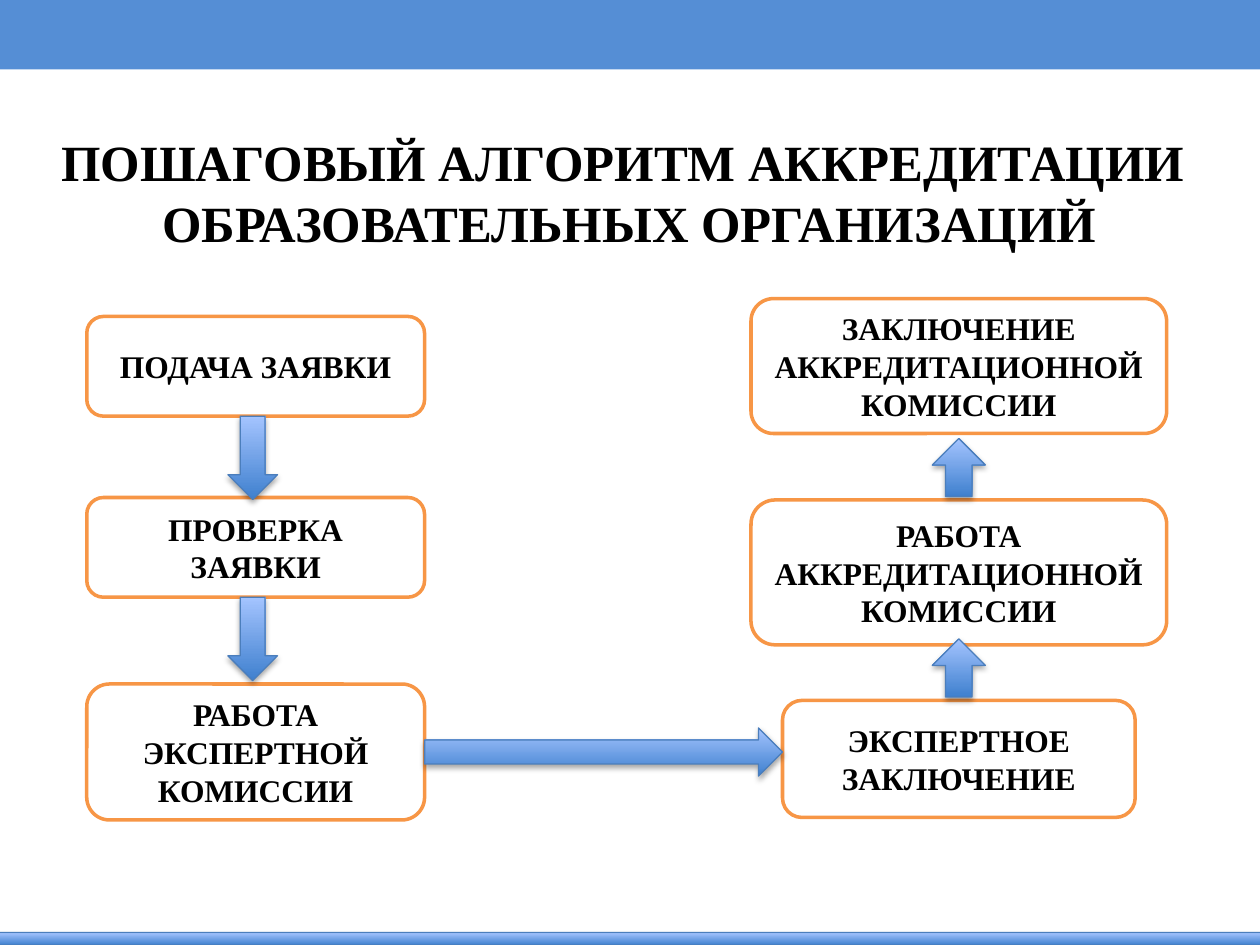
from dataclasses import dataclass
from itertools import pairwise

from lxml import etree
from pptx import Presentation
from pptx.dml.color import RGBColor
from pptx.enum.shapes import MSO_SHAPE as Shape
from pptx.enum.text import MSO_ANCHOR as Anchor, PP_ALIGN as Align
from pptx.oxml import parse_xml
from pptx.oxml.ns import nsdecls
from pptx.util import Cm, Pt


@dataclass(frozen=True)
class Theme:
    font: str = "Times New Roman"
    title_size: float = 29
    step_size: float = 18
    text: str = "000000"
    banner: str = "558ED5"
    box_fill: str = "FFFFFF"
    box_line: str = "F79646"
    grad_dark: str = "3F80CE"
    grad_light: str = "A4C4FF"
    grad_line: str = "4B7EBC"


@dataclass(frozen=True)
class Box:
    """A rectangle in centimetres."""
    x: float
    y: float
    w: float
    h: float

    @property
    def cx(self):
        return self.x + self.w / 2

    @property
    def cy(self):
        return self.y + self.h / 2

    @property
    def right(self):
        return self.x + self.w

    @property
    def bottom(self):
        return self.y + self.h


THEME = Theme()
SLIDE = Box(0, 0, 25.4, 19.05)
SHADOW = (
    f'<a:effectLst {nsdecls("a")}>'
    '<a:outerShdw blurRad="40000" dist="23000" dir="5400000" rotWithShape="0">'
    '<a:srgbClr val="000000"><a:alpha val="35000"/></a:srgbClr>'
    '</a:outerShdw></a:effectLst>'
)


def rgb(value):
    return RGBColor.from_string(value)


def add_shape(slide, kind, box):
    sp = slide.shapes.add_shape(kind, Cm(box.x), Cm(box.y), Cm(box.w), Cm(box.h))
    sp.shadow.inherit = False
    return sp


def style_text(tf, size):
    for p in tf.paragraphs:
        p.alignment = Align.CENTER
        for r in p.runs:
            r.font.name = THEME.font
            r.font.size = Pt(size)
            r.font.bold = True
            r.font.color.rgb = rgb(THEME.text)


def add_glossy(slide, kind, box):
    """Shape with a vertical blue gradient and a soft shadow."""
    sp = add_shape(slide, kind, box)
    sp.fill.gradient()
    sp.fill.gradient_angle = 90
    for stop, color in zip(sp.fill.gradient_stops, (THEME.grad_dark, THEME.grad_light)):
        stop.color.rgb = rgb(color)
    sp.line.color.rgb = rgb(THEME.grad_line)
    sp.line.width = Pt(0.75)
    props = sp.element.spPr
    old = props.find("{*}effectLst")
    props.replace(old, parse_xml(SHADOW))


def add_step(slide, box, text):
    sp = add_shape(slide, Shape.ROUNDED_RECTANGLE, box)
    sp.fill.solid()
    sp.fill.fore_color.rgb = rgb(THEME.box_fill)
    sp.line.color.rgb = rgb(THEME.box_line)
    sp.line.width = Pt(2)
    tf = sp.text_frame
    tf.word_wrap = True
    tf.vertical_anchor = Anchor.MIDDLE
    tf.text = text
    style_text(tf, THEME.step_size)


def add_bands(slide, box):
    # Top banner
    banner = add_shape(slide, Shape.RECTANGLE, Box(box.x, box.y, box.w, 1.4))
    banner.fill.solid()
    banner.fill.fore_color.rgb = rgb(THEME.banner)
    banner.line.fill.background()
    # Bottom strip, running slightly past both edges
    add_glossy(slide, Shape.PARALLELOGRAM,
               Box(box.x - 0.3, box.bottom - 0.25, box.w + 0.64, 0.25))


def add_title(slide, box):
    title = slide.shapes.title
    title.left, title.top = Cm(box.x), Cm(box.y)
    title.width, title.height = Cm(box.w), Cm(box.h)
    tf = title.text_frame
    tf.vertical_anchor = Anchor.TOP
    tf.text = "ПОШАГОВЫЙ АЛГОРИТМ АККРЕДИТАЦИИ \nОБРАЗОВАТЕЛЬНЫХ ОРГАНИЗАЦИЙ"
    style_text(tf, THEME.title_size)


def add_column(slide, box, steps, upward=False):
    """Stack steps (text, offset, width, height) from the top; return their boxes."""
    boxes = []
    for text, offset, w, h in steps:
        boxes.append(Box(box.cx - w / 2, box.y + offset, w, h))
        add_step(slide, boxes[-1], text)
    # Arrows between neighbouring steps
    for upper, lower in pairwise(boxes):
        if upward:
            w, h = 1.07, 1.17
            add_glossy(slide, Shape.UP_ARROW,
                       Box(box.cx - w / 2, lower.y - 0.07 - h, w, h))
        else:
            w, h = 1, 1.68
            add_glossy(slide, Shape.DOWN_ARROW,
                       Box(box.cx - 0.06 - w / 2, upper.bottom, w, h))
    return boxes


def add_flow(slide, box):
    # Application steps, read downwards
    left = add_column(slide, Box(box.x, box.y + 0.36, 6.81, box.h), [
        ("ПОДАЧА ЗАЯВКИ", 0, 6.81, 2.01),
        ("ПРОВЕРКА ЗАЯВКИ", 3.65, 6.81, 2.01),
        ("РАБОТА ЭКСПЕРТНОЙ КОМИССИИ", 7.41, 6.81, 2.74),
    ])
    # Decision steps, read upwards
    right = add_column(slide, Box(box.right - 8.38, box.y, 8.38, box.h), [
        ("ЗАКЛЮЧЕНИЕ АККРЕДИТАЦИОННОЙ КОМИССИИ", 0, 8.38, 2.72),
        ("РАБОТА АККРЕДИТАЦИОННОЙ КОМИССИИ", 4.06, 8.38, 2.92),
        ("ЭКСПЕРТНОЕ ЗАКЛЮЧЕНИЕ", 8.1, 7.11, 2.36),
    ], upward=True)
    # Arrow linking the two columns
    start, end, h = left[-1], right[-1], 0.97
    add_glossy(slide, Shape.RIGHT_ARROW,
               Box(start.right, start.cy - h / 2, end.x - start.right, h))


def main():
    prs = Presentation()
    prs.slide_width, prs.slide_height = Cm(SLIDE.w), Cm(SLIDE.h)
    slide = prs.slides.add_slide(prs.slide_layouts[5])
    add_bands(slide, SLIDE)
    add_title(slide, Box(0.81, 2.51, 23.77, 2.74))
    add_flow(slide, Box(1.75, 6.02, 21.77, 10.5))
    prs.save("out.pptx")


if __name__ == "__main__":
    main()
